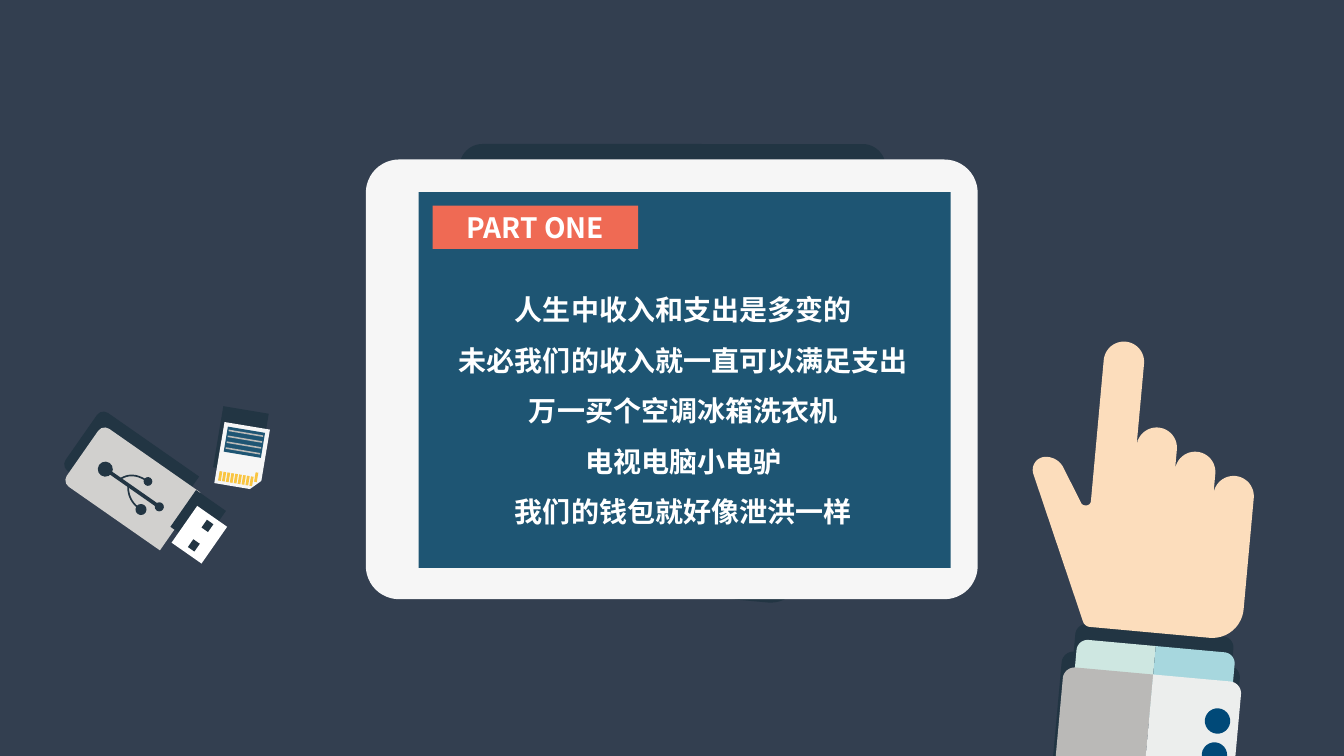
import dataclasses
import math

import pptx
import pptx.dml.color
import pptx.enum.shapes
import pptx.enum.text
import pptx.oxml.ns
import pptx.util

Cm, Pt = pptx.util.Cm, pptx.util.Pt
PRESET = pptx.enum.shapes.MSO_SHAPE
ANCHOR = pptx.enum.text.MSO_ANCHOR

PART_LABEL = "PART ONE"
LINES = [
    "人生中收入和支出是多变的",
    "未必我们的收入就一直可以满足支出",
    "万一买个空调冰箱洗衣机",
    "电视电脑小电驴",
    "我们的钱包就好像泄洪一样",
]


@dataclasses.dataclass(frozen=True)
class Theme:
    font: str = "Noto Sans CJK SC"
    text_size: int = 20
    backdrop: str = "333F50"
    shade: str = "223543"
    white: str = "FFFFFF"
    casing: str = "F6F6F6"
    screen: str = "1E5573"
    label: str = "EF6A54"
    metal: str = "D1D0CE"
    stripe: str = "BBBAB7"
    gold: str = "F9C541"
    skin: str = "FCDDBC"
    cuff: tuple = ("CEE7E1", "A7D7DE")
    sleeve: tuple = ("BAB9B7", "ECEEED")
    button: str = "004978"


@dataclasses.dataclass(frozen=True)
class Frame:
    """A tilted drawing surface: origin in cm on the slide, tilt in degrees."""
    x: float
    y: float
    tilt: float = 0

    def point(self, x, y):
        cos, sin = math.cos(math.radians(self.tilt)), math.sin(math.radians(self.tilt))
        return self.x + x * cos - y * sin, self.y + x * sin + y * cos

    def moved(self, dx, dy):
        return dataclasses.replace(self, x=self.x + dx, y=self.y + dy)


THEME = Theme()
SHADOW = (-0.03, -0.4)
USB = Frame(3.31, 12.28, 34.9)
CARD = Frame(6.1, 11.5, 9.5)
HAND = Frame(28.37, 8.61, 5.2)  # origin at the tip of the index finger
HAND_ON_TABLET = HAND.moved(-11.13, -0.89)

# Left, top, width, height in cm
TABLET_SHADOW = (11.58, 3.63, 10.74, 7.72)
TABLET = (9.22, 4.02, 15.42, 11.08)
SCREEN = (10.55, 4.84, 13.41, 9.47)
LABEL_BOX = (10.9, 5.18, 5.18, 1.09)
LINES_BOX = (10.69, 6.83, 13.06, 6.65)

FINGER_WIDTH = 1.02
FINGER_TOPS = [0, 2.08, 2.6, 3.12]
# Corners are x, y, radius, listed clockwise
PALM_AND_THUMB = [(3.57, 7.24, 0.79), (-0.38, 7.24, 0.2), (-2.22, 3.07, 0.33),
                  (-1.42, 3.07, 0.5), (-0.72, 4.2, 0.12), (-0.51, 4.2, 0.12)]
SEAM = 1.45
# Top, bottom, corner radius, outer edges left and right, colours left and right
GARMENTS = [(7.57, 9.47, 0.28, (-0.53, 3.47), THEME.cuff),
            (8.29, 11.13, 0.3, (-0.81, 3.7), THEME.sleeve)]


def color(code):
    return pptx.dml.color.RGBColor.from_string(code)


def paint(shape, fill):
    shape.shadow.inherit = False
    shape.fill.solid()
    shape.fill.fore_color.rgb = color(fill)
    shape.line.fill.background()


def add_box(shapes, preset, box, fill, radius=None):
    shape = shapes.add_shape(preset, *map(Cm, box))
    paint(shape, fill)
    if radius is not None:
        shape.adjustments[0] = radius / min(box[2:])
    return shape


def add_tilted(shapes, frame, preset, center, size, fill, radius=None, turn=0):
    """Centre a preset on a point of the frame; turn is added to the frame's tilt."""
    x, y = frame.point(*center)
    width, height = size
    box = (x - width / 2, y - height / 2, width, height)
    add_box(shapes, preset, box, fill, radius).rotation = frame.tilt + turn


def bend(start, control, end, weight=1, steps=12):
    """Points of a conic: weight 1 is a parabola, sin(half angle) a circular arc."""
    points = []
    for step in range(steps + 1):
        t = step / steps
        a, b, c = (1 - t) ** 2, 2 * t * (1 - t) * weight, t * t
        points.append(tuple((a * p + b * q + c * r) / (a + b + c)
                            for p, q, r in zip(start, control, end)))
    return points


def round_corners(corners):
    points = []
    for i, (x, y, radius) in enumerate(corners):
        corner = (x, y)
        if radius == 0:
            points.append(corner)
            continue
        before, after = corners[i - 1][:2], corners[(i + 1) % len(corners)][:2]
        to_before, to_after = (math.atan2(p[1] - y, p[0] - x) for p in (before, after))
        half = math.acos(math.cos(to_before - to_after)) / 2
        reach = radius / math.tan(half)
        start, end = ((x + reach * math.cos(a), y + reach * math.sin(a))
                      for a in (to_before, to_after))
        points += bend(start, corner, end, math.sin(half))
    return points


def add_path(shapes, frame, points, closed=True):
    first, *rest = [tuple(map(Cm, frame.point(*point))) for point in points]
    builder = shapes.build_freeform(*first)
    builder.add_line_segments(rest, close=closed)
    return builder.convert_to_shape()


def add_stroke(shapes, frame, points, width):
    stroke = add_path(shapes, frame, points, closed=False)
    stroke.shadow.inherit = False
    stroke.fill.background()
    stroke.line.color.rgb = color(THEME.shade)
    stroke.line.width = Pt(width)


def draw_usb_body(shapes):
    for frame, fill in [(USB.moved(*SHADOW), THEME.shade), (USB, THEME.metal)]:
        add_tilted(shapes, frame, PRESET.ROUND_2_SAME_RECTANGLE, (0, 0), (1.78, 3), fill,
                   radius=0.2, turn=-90)
    hub, tip, upper, lower = (-0.8, 0), (0.86, 0), (0.26, -0.36), (0.52, 0.32)
    add_stroke(shapes, USB, [hub, tip], 2.6)
    add_stroke(shapes, USB, bend((-0.35, 0), (-0.22, -0.36), upper), 1.2)
    add_stroke(shapes, USB, bend((-0.1, 0), (0.12, 0.34), lower), 1.2)
    for node, diameter in [(hub, 0.38), (tip, 0.23), (upper, 0.22), (lower, 0.28)]:
        add_tilted(shapes, USB, PRESET.OVAL, node, (diameter, diameter), THEME.shade)


def draw_usb_plug(shapes):
    for frame, fill in [(USB.moved(*SHADOW), THEME.shade), (USB, THEME.white)]:
        add_tilted(shapes, frame, PRESET.RECTANGLE, (2.09, 0), (0.92, 1.13), fill)
    for y in (-0.3, 0.3):
        add_tilted(shapes, USB, PRESET.RECTANGLE, (2.13, y), (0.2, 0.24), THEME.shade)


def draw_card(shapes):
    for frame, fill in [(CARD.moved(*SHADOW), THEME.shade), (CARD, THEME.casing)]:
        add_tilted(shapes, frame, PRESET.SNIP_1_RECTANGLE, (0, 0), (1.56, 1.16), fill,
                   radius=0.25, turn=90)
    pins = [(-0.46 + 0.1 * i, 0.58 if i < 9 else 0.46) for i in range(10)]
    stripes = [(0, -0.59 + 0.15 * i) for i in range(4)]
    for centers, size, fill in [(pins, (0.07, 0.24), THEME.gold),
                                ([(0, -0.36)], (0.95, 0.64), THEME.screen),
                                (stripes, (0.88, 0.04), THEME.stripe)]:
        for center in centers:
            add_tilted(shapes, CARD, PRESET.RECTANGLE, center, size, fill)


def draw_hand(shapes, frame, fill):
    radius = FINGER_WIDTH / 2
    corners = []
    for i, top in enumerate(FINGER_TOPS):
        left, right = i * FINGER_WIDTH - radius, i * FINGER_WIDTH + radius
        if i:
            corners.append((left, top + radius, 0))
        corners += [(left, top, radius), (right, top, radius)]
    paint(add_path(shapes, frame, round_corners(corners + PALM_AND_THUMB)), fill)


def draw_tablet(shapes):
    add_box(shapes, PRESET.ROUNDED_RECTANGLE, TABLET_SHADOW, THEME.shade, radius=0.58)
    draw_hand(shapes, HAND_ON_TABLET, THEME.shade)
    add_box(shapes, PRESET.ROUNDED_RECTANGLE, TABLET, THEME.casing, radius=0.84)
    add_box(shapes, PRESET.RECTANGLE, SCREEN, THEME.screen)


def draw_arm(shapes):
    for frame, shaded in [(HAND.moved(*SHADOW), True), (HAND, False)]:
        for top, bottom, radius, edges, fills in GARMENTS:
            for edge, fill in zip(edges, fills):
                half = [(edge, top, radius), (SEAM, top, 0), (SEAM, bottom, 0), (edge, bottom, 0)]
                paint(add_path(shapes, frame, round_corners(half)),
                      THEME.shade if shaded else fill)
    draw_hand(shapes, HAND, THEME.skin)
    for y in (9.31, 10.17):
        add_tilted(shapes, HAND, PRESET.OVAL, (3.17, y), (0.64, 0.64), THEME.button)


def set_all(target, values):
    for name, value in values.items():
        setattr(target, name, value)


def write(holder, box, lines, spacing, anchor):
    """Bring a placeholder to the front, place it and write its lines."""
    holder.element.getparent().append(holder.element)
    set_all(holder, dict(zip(("left", "top", "width", "height"), map(Cm, box))))
    set_all(holder.text_frame, {
        "text": "\n".join(lines), "word_wrap": True, "vertical_anchor": anchor,
        "auto_size": pptx.enum.text.MSO_AUTO_SIZE.NONE})
    for paragraph in holder.text_frame.paragraphs:
        set_all(paragraph, {"alignment": pptx.enum.text.PP_ALIGN.CENTER,
                            "line_spacing": spacing, "space_before": Pt(0)})
        layout = paragraph._p.get_or_add_pPr()
        layout.set("marL", "0")
        layout.set("indent", "0")
        layout.append(layout.makeelement(pptx.oxml.ns.qn("a:buNone"), {}))
        for run in paragraph.runs:
            set_all(run.font, {"name": THEME.font, "size": Pt(THEME.text_size), "bold": True})
            run.font.color.rgb = color(THEME.white)
            latin = run._r.get_or_add_rPr().find(pptx.oxml.ns.qn("a:latin"))
            latin.addnext(latin.makeelement(pptx.oxml.ns.qn("a:ea"), {"typeface": THEME.font}))


def main():
    deck = pptx.Presentation()
    deck.slide_width, deck.slide_height = Cm(33.87), Cm(19.05)
    slide = deck.slides.add_slide(deck.slide_layouts[1])
    slide.background.fill.solid()
    slide.background.fill.fore_color.rgb = color(THEME.backdrop)
    for draw in (draw_usb_body, draw_usb_plug, draw_card, draw_tablet, draw_arm):
        draw(slide.shapes.add_group_shape().shapes)
    title, body = slide.placeholders
    write(body, LINES_BOX, LINES, 1.5, ANCHOR.TOP)
    write(title, LABEL_BOX, [PART_LABEL], 1.0, ANCHOR.MIDDLE)
    title.fill.solid()
    title.fill.fore_color.rgb = color(THEME.label)
    deck.save("out.pptx")


if __name__ == "__main__":
    main()
